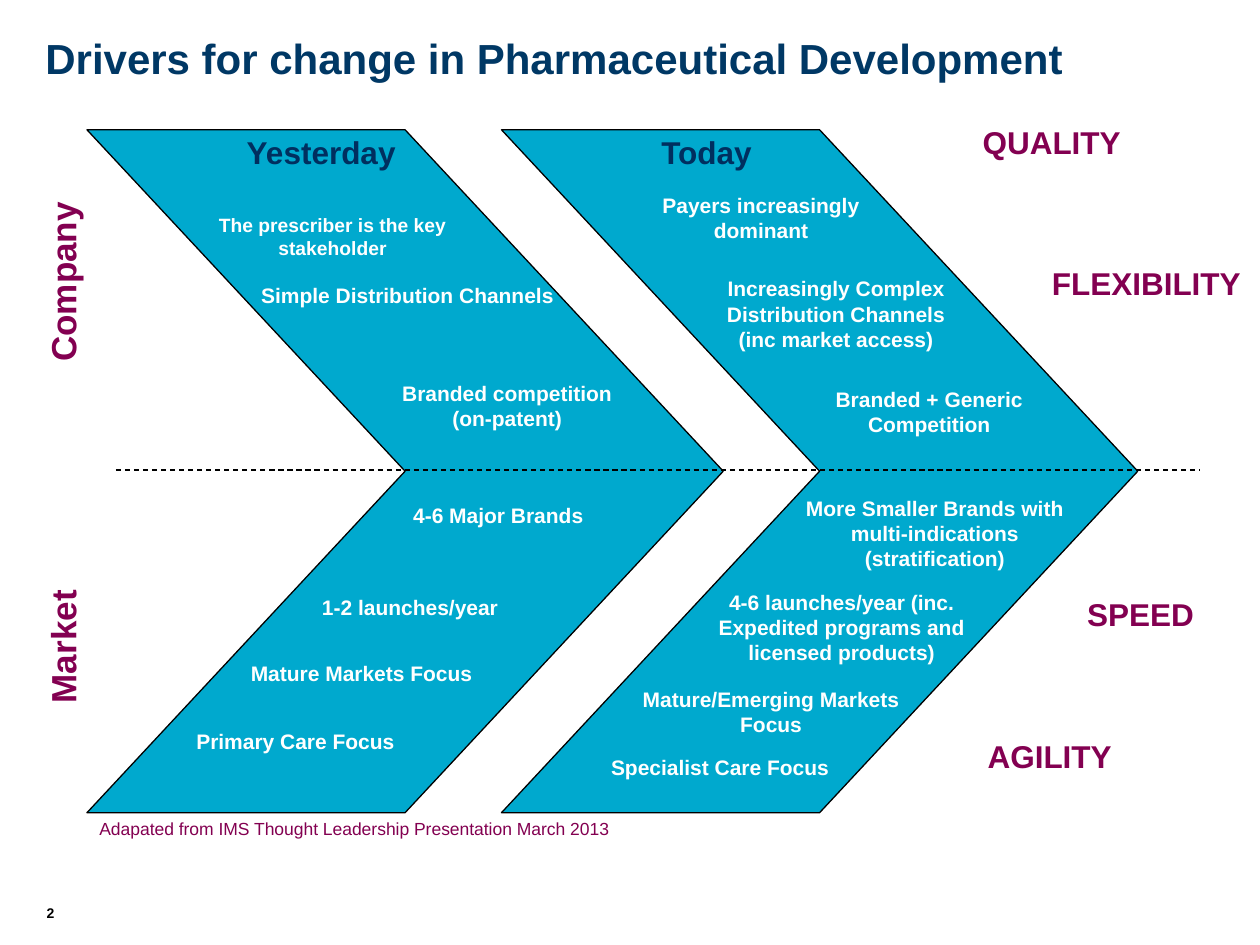
import pptx
import pptx.util
import pptx.dml.color
import pptx.enum.dml
import pptx.enum.shapes
import pptx.enum.text
import pptx.oxml.ns
from lxml import etree

Inches = pptx.util.Inches
RGBColor = pptx.dml.color.RGBColor
ALIGN = pptx.enum.text.PP_ALIGN
AUTO_SIZE = pptx.enum.text.MSO_AUTO_SIZE

TITLE_BLUE = RGBColor(0x00, 0x38, 0x65)
HEADING_BLUE = RGBColor(0x00, 0x2F, 0x5F)
CHEVRON_BLUE = RGBColor(0x00, 0xA9, 0xCE)
PLUM = RGBColor(0x83, 0x00, 0x51)
BLACK = RGBColor(0x00, 0x00, 0x00)
WHITE = RGBColor(0xFF, 0xFF, 0xFF)

CHEVRON_LEFTS = (0.69, 3.98)
CHEVRON_TOP, CHEVRON_WIDTH, CHEVRON_HEIGHT = 1.03, 5.05, 5.42

# Each label: lines of text, then left, top, width, height.
HEADINGS = [
    (["Yesterday"], 1.86, 1.01, 1.39, 0.4),
    (["Today"], 5.15, 1.01, 0.93, 0.4),
]
SIDE_LABELS = [
    (["Company"], -0.24, 2.01, 1.48, 0.44),
    (["Market"], -0.05, 4.91, 1.1, 0.44),
]
DRIVERS = [
    (["QUALITY"], 7.7, 0.93, 1.31, 0.4),
    (["FLEXIBILITY"], 8.25, 2.05, 1.72, 0.4),
    (["SPEED"], 8.53, 4.67, 1.06, 0.4),
    (["AGILITY"], 7.74, 5.8, 1.2, 0.4),
]
PRESCRIBER = (["The prescriber is the key\nstakeholder"], 1.61, 1.64, 2.06, 0.47)
STATEMENTS = [
    (["Simple Distribution Channels"], 1.96, 2.19, 2.55, 0.3),
    (["Branded competition", "(on-patent)"], 3.08, 2.97, 1.89, 0.5),
    (["4-6 Major Brands"], 3.17, 3.94, 1.57, 0.3),
    (["1-2 launches/year"], 2.45, 4.67, 1.61, 0.3),
    (["Mature Markets Focus"], 1.88, 5.19, 1.98, 0.3),
    (["Primary Care Focus"], 1.45, 5.73, 1.79, 0.3),
    (["Payers increasingly", "dominant"], 5.15, 1.48, 1.78, 0.5),
    (["Increasingly Complex", "Distribution Channels", "(inc market access)"],
     5.64, 2.14, 1.99, 0.71),
    (["Branded + Generic", "Competition"], 6.5, 3.02, 1.75, 0.5),
    (["More Smaller Brands with", "multi-indications", "(stratification)"],
     6.26, 3.88, 2.32, 0.71),
    (["4-6 launches/year (inc.\nExpedited programs and\nlicensed products)"],
     5.57, 4.63, 2.22, 0.71),
    (["Mature/Emerging Markets", "Focus"], 4.97, 5.4, 2.3, 0.5),
    (["Specialist Care Focus"], 4.74, 5.94, 1.95, 0.3),
]
SOURCE_NOTE = (["Adapated from IMS Thought Leadership Presentation March 2013"],
               0.69, 6.44, 4.27, 0.27)
SLIDE_NUMBER = (["2"], 0.37, 7.18, 0.43, 0.24)


def format_paragraph(paragraph, size, color, bold=True, alignment=ALIGN.LEFT):
    paragraph.alignment = alignment
    font_values = {"name": "Arial", "size": pptx.util.Pt(size), "bold": bold}
    for name, value in font_values.items():
        setattr(paragraph.font, name, value)
    paragraph.font.color.rgb = color


def add_title(slide, text):
    title = slide.shapes.title
    position = {"left": 0.26, "top": 0.21, "width": 9.59, "height": 0.45}
    for name, value in position.items():
        setattr(title, name, Inches(value))
    frame = title.text_frame
    frame.text = text
    frame.auto_size = AUTO_SIZE.NONE
    frame.vertical_anchor = pptx.enum.text.MSO_ANCHOR.TOP
    format_paragraph(frame.paragraphs[0], 24, TITLE_BLUE)


def add_label(slide, label, size, color, **paragraph_format):
    lines, *box = label
    shape = slide.shapes.add_textbox(*map(Inches, box))
    frame = shape.text_frame
    frame.word_wrap = False
    frame.auto_size = AUTO_SIZE.SHAPE_TO_FIT_TEXT
    for index, line in enumerate(lines):
        paragraph = frame.paragraphs[0] if index == 0 else frame.add_paragraph()
        paragraph.text = line
        format_paragraph(paragraph, size, color, **paragraph_format)
    return shape


def add_slide_number(slide):
    shape = add_label(slide, SLIDE_NUMBER, 8, BLACK)
    frame = shape.text_frame
    frame.word_wrap = True
    frame.auto_size = AUTO_SIZE.NONE
    for side in ("left", "top", "right", "bottom"):
        setattr(frame, f"margin_{side}", 0)


def format_line(line):
    line.color.rgb = BLACK
    line.width = pptx.util.Pt(0.75)


def add_chevron(slide, left):
    box = (left, CHEVRON_TOP, CHEVRON_WIDTH, CHEVRON_HEIGHT)
    shape = slide.shapes.add_shape(
        pptx.enum.shapes.MSO_SHAPE.CHEVRON, *map(Inches, box))
    shape.shadow.inherit = False
    shape.fill.solid()
    shape.fill.fore_color.rgb = CHEVRON_BLUE
    format_line(shape.line)


def add_divider(slide):
    """Draw the dashed line between the company and market halves."""
    divider = slide.shapes.add_connector(
        pptx.enum.shapes.MSO_CONNECTOR.STRAIGHT,
        *map(Inches, (0.92, 3.73, 9.52, 3.73)))
    format_line(divider.line)
    divider.line.dash_style = pptx.enum.dml.MSO_LINE.DASH
    etree.SubElement(divider._element.spPr, pptx.oxml.ns.qn("a:effectLst"))


def main():
    presentation = pptx.Presentation()
    presentation.slide_width = Inches(10)
    presentation.slide_height = Inches(7.5)
    slide = presentation.slides.add_slide(presentation.slide_layouts[5])

    add_title(slide, "Drivers for change in Pharmaceutical Development")
    add_slide_number(slide)
    for left in CHEVRON_LEFTS:
        add_chevron(slide, left)
    add_divider(slide)

    for label in SIDE_LABELS:
        add_label(slide, label, 20, PLUM).rotation = 270
    for label in HEADINGS:
        add_label(slide, label, 18, HEADING_BLUE)
    add_label(slide, PRESCRIBER, 11, WHITE, alignment=ALIGN.CENTER)
    for label in STATEMENTS:
        add_label(slide, label, 12, WHITE, alignment=ALIGN.CENTER)
    add_label(slide, SOURCE_NOTE, 10, PLUM, bold=False)
    for label in DRIVERS:
        add_label(slide, label, 18, PLUM)

    presentation.save("out.pptx")


if __name__ == "__main__":
    main()
